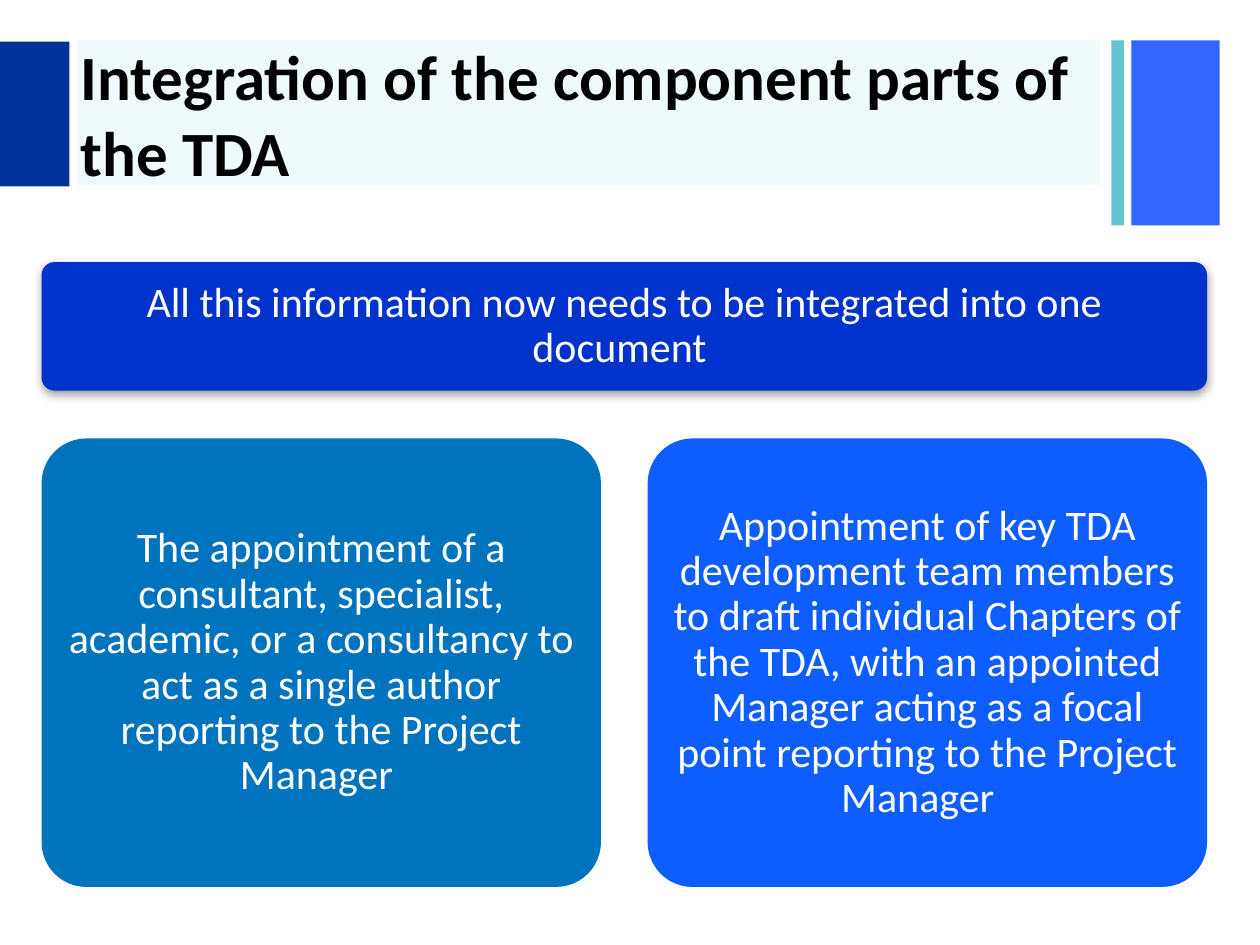
from lxml import etree
from pptx import Presentation
from pptx.dml.color import RGBColor
from pptx.enum.shapes import MSO_SHAPE
from pptx.enum.text import MSO_ANCHOR, PP_ALIGN
from pptx.oxml.ns import qn
from pptx.util import Inches, Pt

RECTANGLE = MSO_SHAPE.RECTANGLE
ROUNDED = MSO_SHAPE.ROUNDED_RECTANGLE
MIDDLE = MSO_ANCHOR.MIDDLE
LEFT, CENTER = PP_ALIGN.LEFT, PP_ALIGN.CENTER

FONT = "Calibri"
COLORS = {
    "blue": "3366FF", "teal": "65C4D2", "tint": "14C5D0", "navy": "003399",
    "banner": "0033CC", "author": "0073BF", "team": "0D5DFF",
    "black": "000000", "white": "FFFFFF", "shadow": "808080",
}

TITLE = "Integration of the component parts of the TDA"
BANNER = "All this information now needs to be integrated into one document "
OPTIONS = [
    ("author", "The appointment of a consultant, specialist, academic, or a consultancy "
               "to act as a single author reporting to the Project Manager "),
    ("team", "Appointment of key TDA development team members to draft individual Chapters "
             "of the TDA, with an appointed Manager acting as a focal point reporting to "
             "the Project Manager  "),
]
BARS = [
    ("blue", 8.98, 0.32, 0.7, 1.47),
    ("teal", 8.82, 0.32, 0.1, 1.47),
    ("tint", 0.61, 0.32, 8.12, 1.15),
    ("navy", 0, 0.33, 0.55, 1.15),
]
MARGIN, CONTENT_WIDTH, GAP = 0.33, 9.25, 0.37
BANNER_TOP, BANNER_HEIGHT = 2.08, 1.02
OPTION_TOP, OPTION_HEIGHT = 3.48, 3.56


def write_text(shape, text, size=24, color="white", bold=False, align=CENTER,
               spacing=0.9, inset=(0.1, 0.1)):
    frame = shape.text_frame
    frame.word_wrap = True
    frame.vertical_anchor = MIDDLE
    frame.margin_left = frame.margin_right = Inches(inset[0])
    frame.margin_top = frame.margin_bottom = Inches(inset[1])
    para = frame.paragraphs[0]
    para.alignment = align
    para.line_spacing = spacing
    span = para.add_run()
    span.text = text
    span.font.name = FONT
    span.font.size = Pt(size)
    span.font.bold = bold
    span.font.color.rgb = RGBColor.from_string(COLORS[color])


def add_box(page, kind, color, *place):
    box = page.shapes.add_shape(kind, *map(Inches, place))
    box.shadow.inherit = False
    box.fill.solid()
    box.fill.fore_color.rgb = RGBColor.from_string(COLORS[color])
    box.line.fill.background()
    if kind == ROUNDED:
        box.adjustments[0] = 0.1
    return box


def set_alpha(color_element, percent):
    etree.SubElement(color_element, qn("a:alpha"), val=str(percent * 1000))


def add_shadow(box):
    effects = box._element.spPr.find(qn("a:effectLst"))
    shadow = etree.SubElement(effects, qn("a:outerShdw"), blurRad=str(Pt(5)),
                              dist=str(Pt(2)), dir="5400000", rotWithShape="0")
    color = etree.SubElement(shadow, qn("a:srgbClr"), val=COLORS["shadow"])
    set_alpha(color, 75)


def main():
    deck = Presentation()
    deck.slide_width, deck.slide_height = Inches(10), Inches(7.5)
    page = deck.slides.add_slide(deck.slide_layouts[5])

    for color, *place in BARS:
        bar = add_box(page, RECTANGLE, color, *place)
        if color == "tint":
            set_alpha(bar._element.spPr.find(qn("a:solidFill"))[0], 7)

    title = page.shapes.title
    title.left, title.top = Inches(0.54), Inches(0.34)
    title.width, title.height = Inches(8.27), Inches(1.12)
    write_text(title, TITLE, size=36, color="black", bold=True, align=LEFT,
               spacing=1.0, inset=(0.1, 0.05))
    title._element.getparent().append(title._element)

    banner = add_box(page, ROUNDED, "banner", MARGIN, BANNER_TOP, CONTENT_WIDTH, BANNER_HEIGHT)
    add_shadow(banner)
    write_text(banner, BANNER, inset=(0.13, 0.13))

    width = (CONTENT_WIDTH - GAP) / len(OPTIONS)
    for index, (color, text) in enumerate(OPTIONS):
        left = MARGIN + index * (width + GAP)
        box = add_box(page, ROUNDED, color, left, OPTION_TOP, width, OPTION_HEIGHT)
        write_text(box, text)

    deck.save("out.pptx")


if __name__ == "__main__":
    main()
